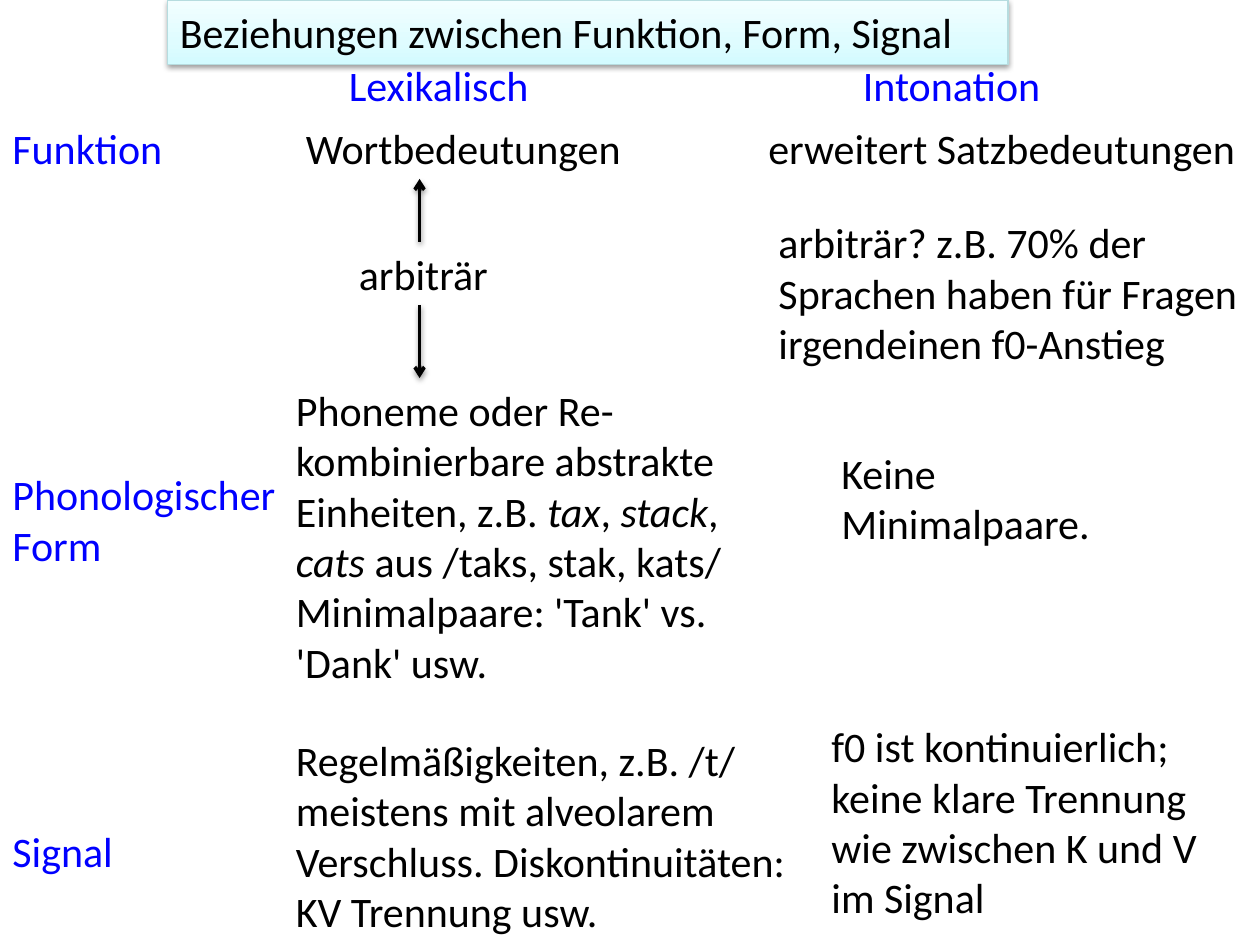
from lxml.etree import SubElement
from pptx import Presentation
from pptx.dml.color import RGBColor
from pptx.enum.shapes import MSO_CONNECTOR, MSO_SHAPE
from pptx.enum.text import MSO_ANCHOR, MSO_AUTO_SIZE, PP_ALIGN
from pptx.oxml.ns import qn
from pptx.util import Inches, Pt

BLACK, BLUE = "000000", "0000FF"
FONT = {"name": "Calibri", "size": Pt(24)}
FRAME = {"word_wrap": True, "auto_size": MSO_AUTO_SIZE.SHAPE_TO_FIT_TEXT,
         "vertical_anchor": MSO_ANCHOR.TOP}


def rgb(value):
    return RGBColor.from_string(value)


def apply(target, values):
    for name, value in values.items():
        setattr(target, name, value)


def write(tf, runs, color):
    """Fill a frame with (text, italic) runs."""
    apply(tf, FRAME)
    p = tf.paragraphs[0]
    p.alignment = PP_ALIGN.LEFT
    for text, italic in runs:
        r = p.add_run()
        r.text = text
        apply(r.font, {**FONT, "italic": italic})
        r.font.color.rgb = rgb(color)


def add_text(shapes, text, box, color=BLACK):
    """A plain string, or a list of (text, italic) runs."""
    runs = [(text, False)] if isinstance(text, str) else text
    tb = shapes.add_textbox(*map(Inches, box))
    write(tb.text_frame, runs, color)


def add_shadow(sp):
    effects = SubElement(sp._element.spPr, qn("a:effectLst"))
    shadow = SubElement(effects, qn("a:outerShdw"), blurRad=str(Pt(3.1)),
                        dist=str(Pt(1.6)), dir="5400000", rotWithShape="0")
    color = SubElement(shadow, qn("a:srgbClr"), val=BLACK)
    SubElement(color, qn("a:alpha"), val="38000")


def add_title(shapes, text, box, stops):
    sp = shapes.add_shape(MSO_SHAPE.RECTANGLE, *map(Inches, box))
    sp.fill.gradient()
    sp.fill.gradient_angle = 90
    gs_list = sp._element.spPr.find(".//" + qn("a:gsLst"))
    for stop in list(gs_list):
        gs_list.remove(stop)
    for percent, color in stops:
        stop = SubElement(gs_list, qn("a:gs"), pos=str(percent * 1000))
        SubElement(stop, qn("a:srgbClr"), val=color)
    sp.line.color.rgb = rgb("B6DCDF")
    sp.line.width = Pt(0.75)
    add_shadow(sp)
    write(sp.text_frame, [(text, False)], BLACK)


def add_arrow(shapes, x, y_from, y_to):
    line = shapes.add_connector(MSO_CONNECTOR.STRAIGHT,
                                *map(Inches, (x, y_from, x, y_to)))
    line.line.color.rgb = rgb(BLACK)
    line.line.width = Pt(2)
    SubElement(line._element.spPr.find(qn("a:ln")), qn("a:tailEnd"), type="arrow")
    add_shadow(line)


def main():
    prs = Presentation()
    prs.slide_width, prs.slide_height = Inches(10), Inches(7.5)
    shapes = prs.slides.add_slide(prs.slide_layouts[6]).shapes

    # Title
    add_title(shapes, "Beziehungen zwischen Funktion, Form, Signal",
              (1.33, 0, 6.67, 0.51),
              [(0, "D3FBFF"), (35, "DFFCFF"), (100, "F2FEFF")])

    # Row and column headings
    for text, box in [
        ("Funktion", (0, 0.92, 1.58, 0.51)),
        ("Phonologischer Form", (0, 3.67, 2.33, 0.92)),
        ("Signal", (0, 6.5, 1.08, 0.51)),
        ("Lexikalisch", (2.67, 0.42, 1.83, 0.5)),
        ("Intonation", (6.75, 0.42, 1.83, 0.5)),
    ]:
        add_text(shapes, text, box, BLUE)

    # Form and signal
    phonemes = [
        ("Phoneme oder Re-kombinierbare abstrakte Einheiten, z.B. ", False),
        ("tax", True), (", ", False), ("stack", True), (", ", False), ("cats", True),
        (" aus /taks, stak, kats/ Minimalpaare: 'Tank' vs. 'Dank' usw.", False),
    ]
    for text, box in [
        (phonemes, (2.25, 3, 3.83, 2.52)),
        ("Regelmäßigkeiten, z.B. /t/ meistens mit alveolarem Verschluss. "
         "Diskontinuitäten: KV Trennung usw.", (2.25, 5.78, 4.17, 1.72)),
        ("f0 ist kontinuierlich; keine klare Trennung wie zwischen K und V "
         "im Signal", (6.5, 5.67, 3.25, 1.72)),
        ("Keine Minimalpaare.", (6.58, 3.5, 2.67, 0.91)),
    ]:
        add_text(shapes, text, box)

    # Function of intonation
    intonation = shapes.add_group_shape().shapes
    add_text(intonation, "erweitert Satzbedeutungen", (6, 0.92, 4.17, 0.5))
    add_text(intonation, "arbiträr? z.B. 70% der Sprachen haben für Fragen "
             "irgendeinen f0-Anstieg", (6.08, 1.67, 3.92, 1.31))

    # Lexical function, with arrows to meaning and form
    lexical = shapes.add_group_shape().shapes
    add_text(lexical, "Wortbedeutungen", (2.33, 0.92, 3.33, 0.5))
    add_text(lexical, "arbiträr", (2.75, 1.92, 1.67, 0.5))
    add_arrow(lexical, 3.33, 1.92, 1.42)
    add_arrow(lexical, 3.33, 2.42, 3)

    prs.save("out.pptx")


if __name__ == "__main__":
    main()
